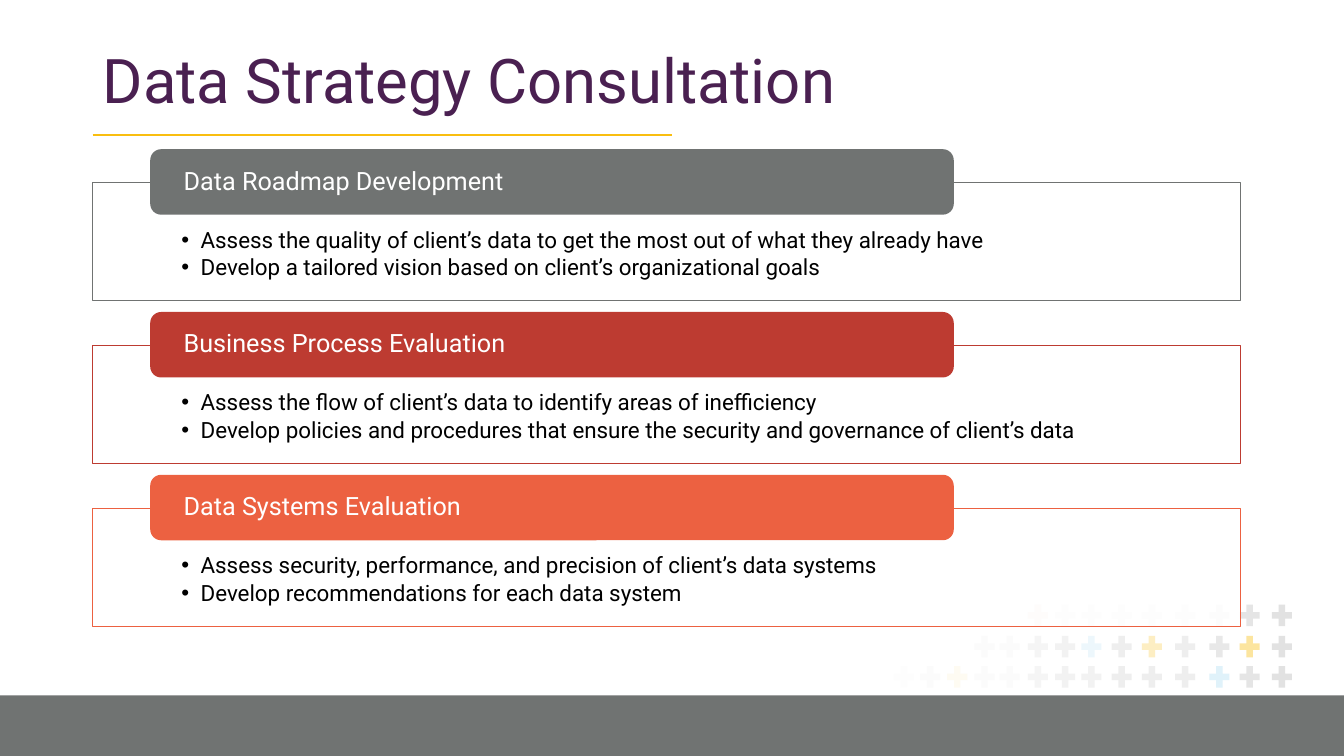
from dataclasses import dataclass

from pptx import Presentation
from pptx.dml.color import RGBColor
from pptx.enum.shapes import MSO_CONNECTOR as Connector, MSO_SHAPE as Shape
from pptx.enum.text import MSO_ANCHOR as Anchor, MSO_AUTO_SIZE as AutoSize, PP_ALIGN as Align
from pptx.oxml.ns import qn
from pptx.util import Inches, Pt
from lxml.etree import SubElement


@dataclass(frozen=True)
class Theme:
    font: str = "Roboto"
    title_size: int = 44
    heading_size: int = 18
    body_size: int = 16
    purple: str = "4A2051"
    gray: str = "707372"
    red: str = "BD3B31"
    orange: str = "EC6141"
    yellow: str = "F9BE10"
    blue: str = "A7DAF1"
    silver: str = "BFBFBF"
    white: str = "FFFFFF"
    black: str = "000000"


class SlideBuilder:
    def __init__(self, page, theme):
        self.page = page
        self.theme = theme

    def set_values(self, target, values):
        for name, value in values.items():
            setattr(target, name, value)

    def shape(self, kind, place, fill, opacity=100, line=None):
        box = self.page.shapes.add_shape(kind, *map(Inches, place))
        box.shadow.inherit = False
        box.fill.solid()
        box.fill.fore_color.rgb = RGBColor.from_string(fill)
        if opacity < 100:
            color = box.fill._xPr.find(qn("a:solidFill"))[0]
            SubElement(color, qn("a:alpha"), val=str(opacity * 1000))
        if line:
            box.line.color.rgb = RGBColor.from_string(line)
            box.line.width = Pt(0.5)
        else:
            box.line.fill.background()
        return box

    def rule(self, left, top, right, color):
        line = self.page.shapes.add_connector(
            Connector.STRAIGHT, *map(Inches, (left, top, right, top)))
        line.line.color.rgb = RGBColor.from_string(color)
        line.line.width = Pt(1)
        SubElement(line._element.spPr, qn("a:effectLst"))

    def text(self, box, lines, size, color, anchor, insets, space=0, bullets=False):
        frame = box.text_frame
        sides = ("margin_left", "margin_top", "margin_right", "margin_bottom")
        self.set_values(frame, {
            "word_wrap": True, "auto_size": AutoSize.NONE, "vertical_anchor": anchor,
            **dict(zip(sides, map(Inches, insets)))})
        for index, line in enumerate(lines):
            para = frame.add_paragraph() if index else frame.paragraphs[0]
            self.set_values(para, {
                "alignment": Align.LEFT, "line_spacing": 0.9, "space_after": Pt(space)})
            if bullets:
                self.bullet(para)
            span = para.add_run()
            span.text = line
            self.set_values(span.font, {"name": self.theme.font, "size": Pt(size)})
            span.font.color.rgb = RGBColor.from_string(color)

    def bullet(self, para):
        properties = para._p.get_or_add_pPr()
        indent = Inches(0.19)
        properties.set("marL", str(indent))
        properties.set("indent", str(-indent))
        SubElement(properties, qn("a:buFont"), typeface="Arial")
        SubElement(properties, qn("a:buChar"), char="•")

    def title(self, words, place):
        box = self.page.shapes.title
        self.set_values(box, dict(zip(("left", "top", "width", "height"), map(Inches, place))))
        self.text(box, [words], self.theme.title_size, self.theme.purple,
                  Anchor.MIDDLE, (0.1, 0.05, 0.1, 0.05))

    def card(self, top, color, heading, points):
        theme = self.theme
        body = self.shape(Shape.RECTANGLE, (0.92, top + 0.33, 11.38, 1.17),
                          theme.white, opacity=90, line=color)
        self.text(body, points, theme.body_size, theme.black, Anchor.TOP,
                  (0.88, 0.46, 0.88, 0.12), space=2.4, bullets=True)
        header = self.shape(Shape.ROUNDED_RECTANGLE, (1.49, top, 7.97, 0.65), color)
        self.text(header, [heading], theme.heading_size, theme.white, Anchor.MIDDLE,
                  (0.3, 0, 0.3, 0))

    def plus_pattern(self, columns, rows, accents):
        for row, (top, first) in enumerate(rows):
            for column, (left, opacity) in enumerate(columns):
                if column >= first:
                    color = accents.get((row, column), self.theme.silver)
                    self.shape(Shape.MATH_PLUS, (left, top, 0.27, 0.29), color, opacity)


def main():
    deck = Presentation()
    deck.slide_width, deck.slide_height = Inches(13.33), Inches(7.5)
    theme = Theme()
    builder = SlideBuilder(deck.slides.add_slide(deck.slide_layouts[5]), theme)

    # Footer band, title and its rule
    builder.shape(Shape.RECTANGLE, (0, 6.9, 13.33, 0.6), theme.gray)
    builder.title("Data Strategy Consultation", (0.92, 0.4, 11.5, 0.85))
    builder.rule(0.92, 1.34, 6.67, theme.yellow)

    # Plus signs that fade to the left: (left, opacity) and (top, first column)
    columns = [(8.83, 2), (9.09, 5), (9.36, 5), (9.63, 5), (9.88, 5), (10.16, 15), (10.43, 20),
               (10.69, 20), (10.99, 25), (11.29, 25), (11.62, 25), (11.96, 35), (12.26, 40),
               (12.58, 45)]
    rows = [(5.96, 5), (6.27, 3), (6.57, 0)]
    accents = {(0, 5): theme.red, (1, 7): theme.blue, (1, 9): theme.yellow,
               (1, 12): theme.yellow, (2, 2): theme.yellow, (2, 11): theme.blue}
    builder.plus_pattern(columns, rows, accents)

    # Service cards, evenly spaced
    cards = [
        (theme.gray, "Data Roadmap Development",
         ["Assess the quality of client’s data to get the most out of what they already have",
          "Develop a tailored vision based on client’s organizational goals"]),
        (theme.red, "Business Process Evaluation",
         ["Assess the flow of client’s data to identify areas of inefficiency",
          "Develop policies and procedures that ensure the security and governance of "
          "client’s data"]),
        (theme.orange, "Data Systems Evaluation",
         ["Assess security, performance, and precision of client’s data systems",
          "Develop recommendations for each data system"]),
    ]
    first_top, last_top = 1.48, 4.71
    pitch = (last_top - first_top) / (len(cards) - 1)
    for index, card in enumerate(cards):
        builder.card(first_top + index * pitch, *card)

    deck.save("out.pptx")


if __name__ == "__main__":
    main()
